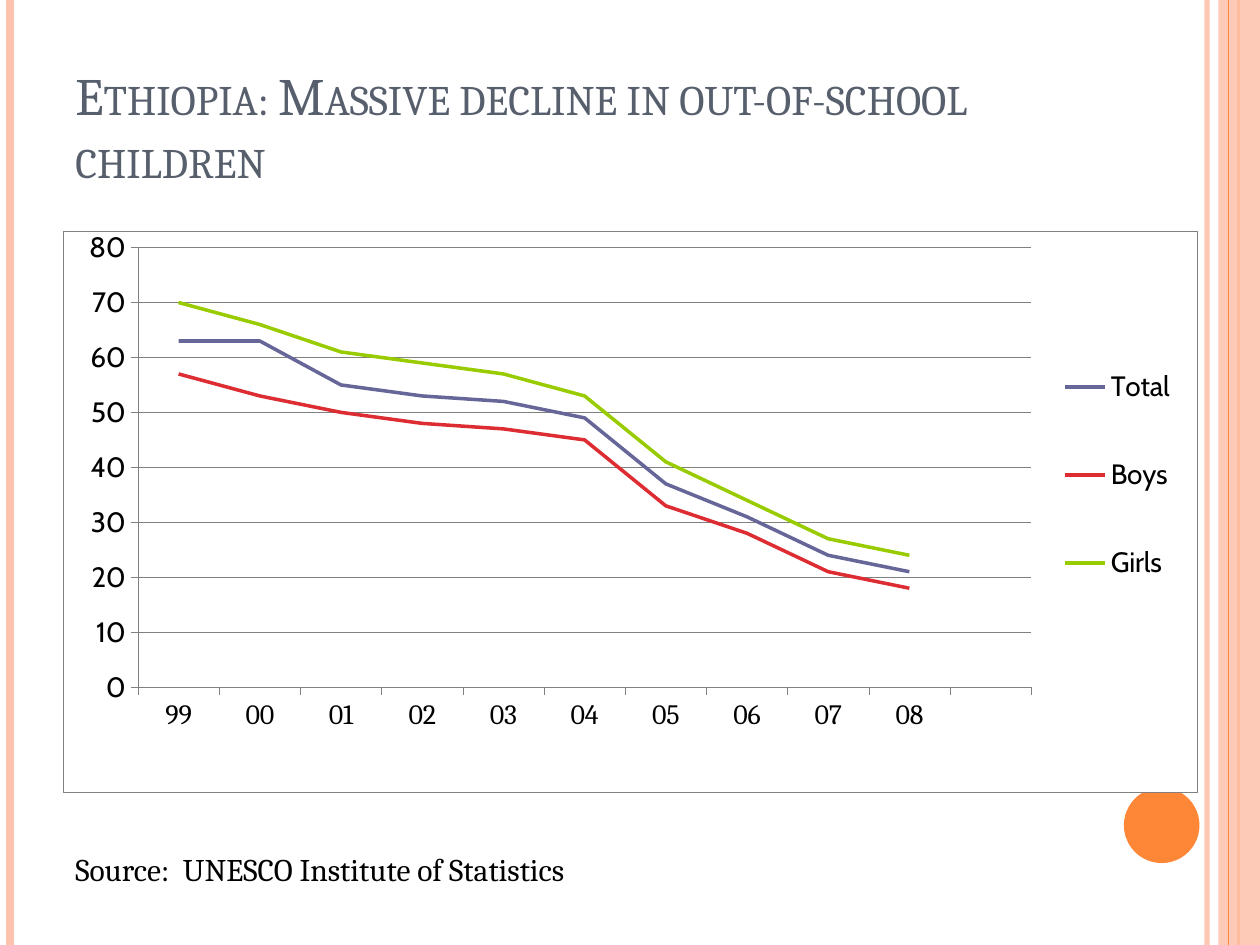
from lxml import etree
from pptx import Presentation
from pptx import util as u
from pptx.chart.data import CategoryChartData
from pptx.dml.color import RGBColor
from pptx.enum import chart as ch, shapes, text
from pptx.oxml import parse_xml
from pptx.oxml.ns import nsdecls, qn

COLORS = dict(peach="FEC3AE", orange="FE8637", slate="575F6D", black="000000",
              white="FFFFFF", gray="808080")
TITLE = "Ethiopia: Massive decline in out-of-school children"
SOURCE = "Source:  UNESCO Institute of Statistics"
YEARS = ["99", "00", "01", "02", "03", "04", "05", "06", "07", "08", ""]
SERIES = [
    ("Total", "666699", [63, 63, 55, 53, 52, 49, 37, 31, 24, 21, None]),
    ("Boys", "DD2D32", [57, 53, 50, 48, 47, 45, 33, 28, 21, 18, None]),
    ("Girls", "99CC00", [70, 66, 61, 59, 57, 53, 41, 34, 27, 24, None]),
]
BACK_STRIPES = [(9.58, "peach", 3, 93), (0.08, "peach", 4.5, 100), (9.83, "orange", 1.5, 100)]
FRONT_STRIPES = [(9.75, "orange", 0.75, 100)]


def rgb(name):
    return RGBColor.from_string(COLORS.get(name, name))


def set_alpha(fill_parent, percent):
    clr = fill_parent.find(".//" + qn("a:srgbClr"))
    etree.SubElement(clr, qn("a:alpha")).set("val", str(percent * 1000))


def add_stripe(s, x, color, width, alpha):
    sp = s.shapes.add_connector(shapes.MSO_CONNECTOR.STRAIGHT, u.Inches(x), 0,
                                u.Inches(x), u.Inches(7.5))
    sp.line.color.rgb = rgb(color)
    sp.line.width = u.Pt(width)
    if alpha < 100:
        set_alpha(sp.line._get_or_add_ln(), alpha)
    etree.SubElement(sp._element.spPr, qn("a:effectLst"))


def add_shape(s, kind, box, color, alpha=100):
    sp = s.shapes.add_shape(kind, *map(u.Inches, box))
    sp.shadow.inherit = False
    sp.fill.solid()
    sp.fill.fore_color.rgb = rgb(color)
    sp.line.fill.background()
    if alpha < 100:
        set_alpha(sp._element.spPr, alpha)


def add_text(s, content, box, size, color="black", anchor=text.MSO_ANCHOR.TOP, small_caps=False):
    tf = s.shapes.add_textbox(*map(u.Inches, box)).text_frame
    tf.word_wrap = True
    tf.vertical_anchor = anchor
    r = tf.paragraphs[0].add_run()
    r.text = content
    r.font.name = "Cambria"
    r.font.size = u.Pt(size)
    r.font.color.rgb = rgb(color)
    if small_caps:
        r._r.get_or_add_rPr().set("cap", "small")


def set_font(font, name, size):
    font.name = name
    font.size = u.Pt(size)
    font.color.rgb = rgb("black")


def set_line(fmt, color, width):
    fmt.line.color.rgb = rgb(color)
    fmt.line.width = u.Pt(width)


def layout_xml(x, y, w, h, inner=False):
    target = '<c:layoutTarget val="inner"/>' if inner else ""
    modes = '<c:xMode val="edge"/><c:yMode val="edge"/>'
    sizes = "".join(f'<c:{k} val="{v}"/>' for k, v in zip("xywh", (x, y, w, h)))
    return parse_xml(f'<c:layout {nsdecls("c")}><c:manualLayout>{target}{modes}{sizes}'
                     '</c:manualLayout></c:layout>')


def panel_xml(border):
    line = (f'<a:ln w="3175"><a:solidFill><a:srgbClr val="{COLORS["gray"]}"/></a:solidFill></a:ln>'
            if border else "<a:ln><a:noFill/></a:ln>")
    return parse_xml(f'<c:spPr {nsdecls("c", "a")}><a:solidFill><a:srgbClr val="{COLORS["white"]}"/>'
                     f'</a:solidFill>{line}</c:spPr>')


def add_line_chart(s, box):
    data = CategoryChartData()
    data.categories = YEARS
    for name, _, vals in SERIES:
        data.add_series(name, vals)
    chart = s.shapes.add_chart(ch.XL_CHART_TYPE.LINE, *map(u.Inches, box), data).chart
    chart.has_title = False
    set_font(chart.font, "Cambria", 10)

    for axis, font in ((chart.category_axis, "Cambria"), (chart.value_axis, "Cabin")):
        set_font(axis.tick_labels.font, font, 16)
        set_line(axis.format, "gray", 0.25)
        axis.major_tick_mark = ch.XL_TICK_MARK.OUTSIDE
        axis.minor_tick_mark = ch.XL_TICK_MARK.NONE
    axis = chart.value_axis
    axis.minimum_scale, axis.maximum_scale, axis.major_unit = 0, 80, 10
    axis.has_major_gridlines = True
    set_line(axis.major_gridlines.format, "gray", 0.25)

    chart.plots[0].vary_by_categories = False
    for series, (_, color, _) in zip(chart.plots[0].series, SERIES):
        series.smooth = False
        series.marker.style = ch.XL_MARKER_STYLE.NONE
        set_line(series.format, color, 2)

    chart.has_legend = True
    legend = chart.legend
    legend.position = ch.XL_LEGEND_POSITION.RIGHT
    legend.include_in_layout = False
    set_font(legend.font, "Cabin", 16)
    root = chart._chartSpace
    for old in legend._element.findall(qn("c:layout")):
        legend._element.remove(old)
    legend._element.find(qn("c:legendPos")).addnext(layout_xml(0.87, 0.15, 0.12, 0.57))

    area = root.find(".//" + qn("c:plotArea"))
    for old in area.findall(qn("c:layout")):
        area.remove(old)
    area.insert(0, layout_xml(0.066, 0.03, 0.788, 0.783, inner=True))
    area.append(panel_xml(border=False))
    root.find(qn("c:chart")).addnext(panel_xml(border=True))


def main():
    prs = Presentation()
    prs.slide_width, prs.slide_height = u.Inches(10), u.Inches(7.5)
    s = prs.slides.add_slide(prs.slide_layouts[6])
    for stripe in BACK_STRIPES:
        add_stripe(s, *stripe)
    add_shape(s, shapes.MSO_SHAPE.RECTANGLE, (9.67, 0, 0.33, 7.5), "peach", 87)
    for stripe in FRONT_STRIPES:
        add_stripe(s, *stripe)
    add_shape(s, shapes.MSO_SHAPE.OVAL, (8.92, 6.25, 0.6, 0.6), "orange")
    add_text(s, TITLE, (0.5, 0.3, 8.17, 1.25), 30, "slate", text.MSO_ANCHOR.BOTTOM, small_caps=True)
    add_line_chart(s, (0.5, 1.83, 9, 4.46))
    add_text(s, SOURCE, (0.5, 6.7, 6.94, 0.4), 18)
    prs.save("out.pptx")


if __name__ == "__main__":
    main()
